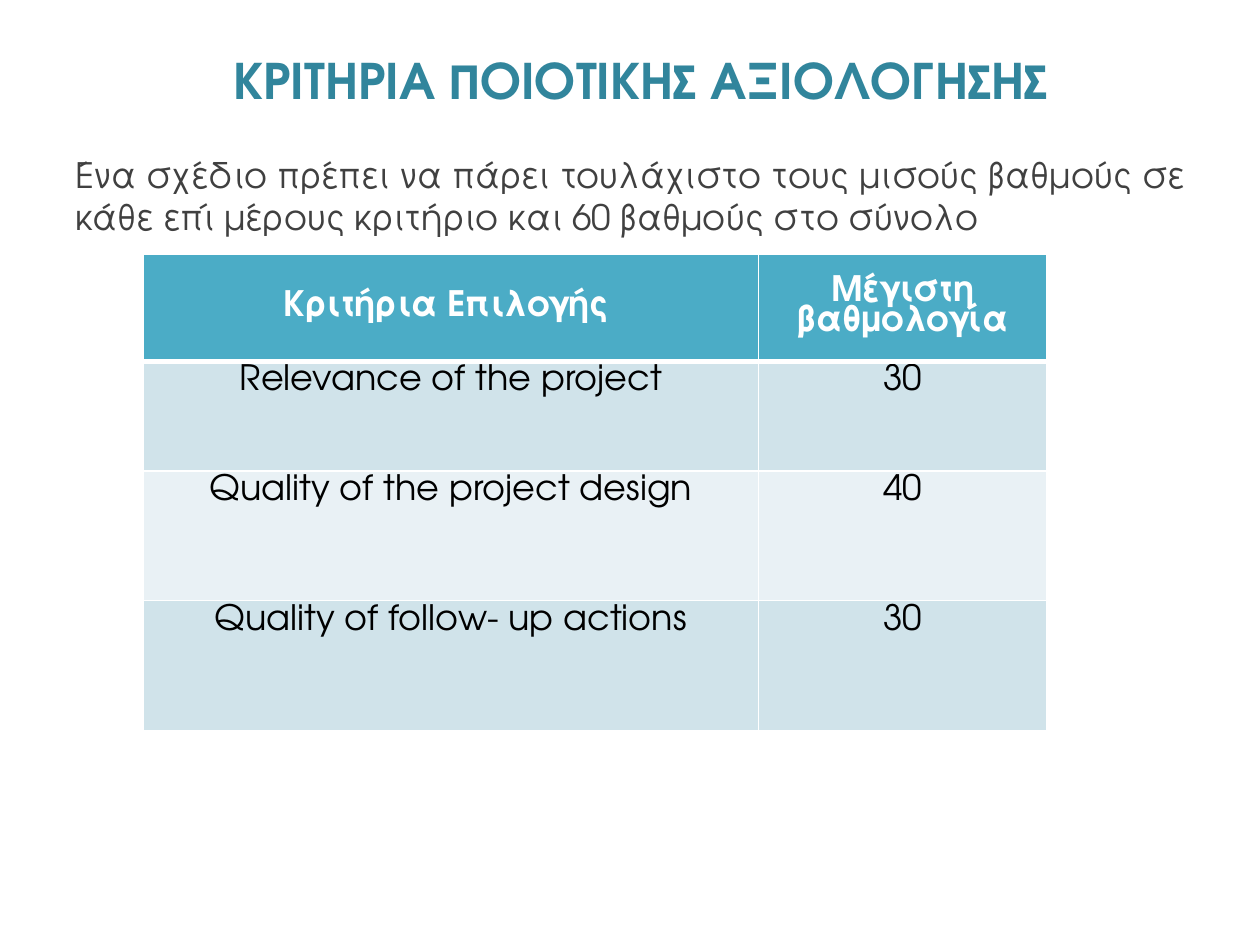
from dataclasses import dataclass

from lxml.etree import SubElement
from pptx import Presentation
from pptx.dml.color import RGBColor
from pptx.enum.text import MSO_ANCHOR, MSO_AUTO_SIZE, PP_ALIGN
from pptx.oxml.ns import qn
from pptx.util import Inches, Pt

SLIDE_WIDTH = Inches(10)
SLIDE_HEIGHT = Inches(7.5)
FONT = "TeX Gyre Adventor"
COLORS = {
    "title": "31859C",
    "body": "404040",
    "header": "4BACC6",
    "odd_row": "D0E3EA",
    "even_row": "E9F1F5",
    "white": "FFFFFF",
    "black": "000000",
}
COLUMN_WIDTHS = (4.88, 2.29)


@dataclass(frozen=True)
class Area:
    left: float
    top: float
    width: float
    height: float

    def lengths(self) -> tuple[int, int, int, int]:
        return (
            round(SLIDE_WIDTH * self.left),
            round(SLIDE_HEIGHT * self.top),
            round(SLIDE_WIDTH * self.width),
            round(SLIDE_HEIGHT * self.height),
        )


@dataclass(frozen=True)
class CriterionRow:
    name: str
    score: str
    height: float
    fill: str
    color: str = "black"
    header: bool = False


TITLE_AREA = Area(0.058, 0.023, 0.9, 0.123)
BODY_AREA = Area(0.05, 0.156, 0.9, 0.844)
TABLE_AREA = Area(0.114, 0.269, 0.717, 0.504)

ROWS = (
    CriterionRow("Κριτήρια Επιλογής ", "Μέγιστη βαθμολογία", 0.85, "header", "white", True),
    CriterionRow("Relevance of the project", "30", 0.87, "odd_row"),
    CriterionRow("Quality of the project design", "40", 1.03, "even_row"),
    CriterionRow("Quality of follow- up actions", "30", 1.03, "odd_row"),
)


def write_text(frame, text: str, *, size: float = 20, color: str = "black",
               bold: bool = False, alignment=PP_ALIGN.CENTER,
               line_spacing: float = 1.0) -> None:
    paragraph = frame.paragraphs[0]
    paragraph.alignment = alignment
    paragraph.line_spacing = line_spacing
    paragraph.space_before = Pt(0)
    run = paragraph.add_run()
    run.text = text
    run.font.name = FONT
    run.font.size = Pt(size)
    run.font.bold = bold
    run.font.color.rgb = RGBColor.from_string(COLORS[color])


def set_borders(cell, top: float, bottom: float) -> None:
    properties = cell._tc.get_or_add_tcPr()
    widths = {"a:lnL": 1, "a:lnR": 1, "a:lnT": top, "a:lnB": bottom}
    for index, (tag, width) in enumerate(widths.items()):
        line = SubElement(properties, qn(tag), w=str(Pt(width)))
        fill = SubElement(line, qn("a:solidFill"))
        SubElement(fill, qn("a:srgbClr"), val=COLORS["white"])
        properties.insert(index, line)


def add_criteria_table(slide) -> None:
    shape = slide.shapes.add_table(len(ROWS), len(COLUMN_WIDTHS), *TABLE_AREA.lengths())
    table = shape.table
    for column, width in zip(table.columns, COLUMN_WIDTHS):
        column.width = Inches(width)
    for row_index, (row, criterion) in enumerate(zip(table.rows, ROWS)):
        row.height = Inches(criterion.height)
        top = 3 if row_index == 1 else 1
        bottom = 3 if criterion.header else 1
        for cell, text in zip(row.cells, (criterion.name, criterion.score)):
            cell.fill.solid()
            cell.fill.fore_color.rgb = RGBColor.from_string(COLORS[criterion.fill])
            cell.vertical_anchor = MSO_ANCHOR.MIDDLE if criterion.header else MSO_ANCHOR.TOP
            write_text(cell.text_frame, text, color=criterion.color,
                       bold=criterion.header, line_spacing=0.9)
            set_borders(cell, top, bottom)


def main() -> None:
    presentation = Presentation()
    presentation.slide_width = SLIDE_WIDTH
    presentation.slide_height = SLIDE_HEIGHT
    slide = presentation.slides.add_slide(presentation.slide_layouts[5])

    title = slide.shapes.title
    title.left, title.top, title.width, title.height = TITLE_AREA.lengths()
    title.text_frame.auto_size = MSO_AUTO_SIZE.NONE
    title.text_frame.vertical_anchor = MSO_ANCHOR.MIDDLE
    write_text(title.text_frame, "ΚΡΙΤΗΡΙΑ ΠΟΙΟΤΙΚΗΣ ΑΞΙΟΛΟΓΗΣΗΣ",
               size=28, color="title", bold=True)

    body = slide.shapes.add_textbox(*BODY_AREA.lengths())
    body.text_frame.word_wrap = True
    write_text(
        body.text_frame,
        "Ένα σχέδιο πρέπει να πάρει τουλάχιστο τους μισούς βαθμούς σε "
        "κάθε επί μέρους κριτήριο και 60 βαθμούς στο σύνολο",
        color="body", alignment=PP_ALIGN.JUSTIFY,
    )

    add_criteria_table(slide)
    presentation.save("out.pptx")


if __name__ == "__main__":
    main()
